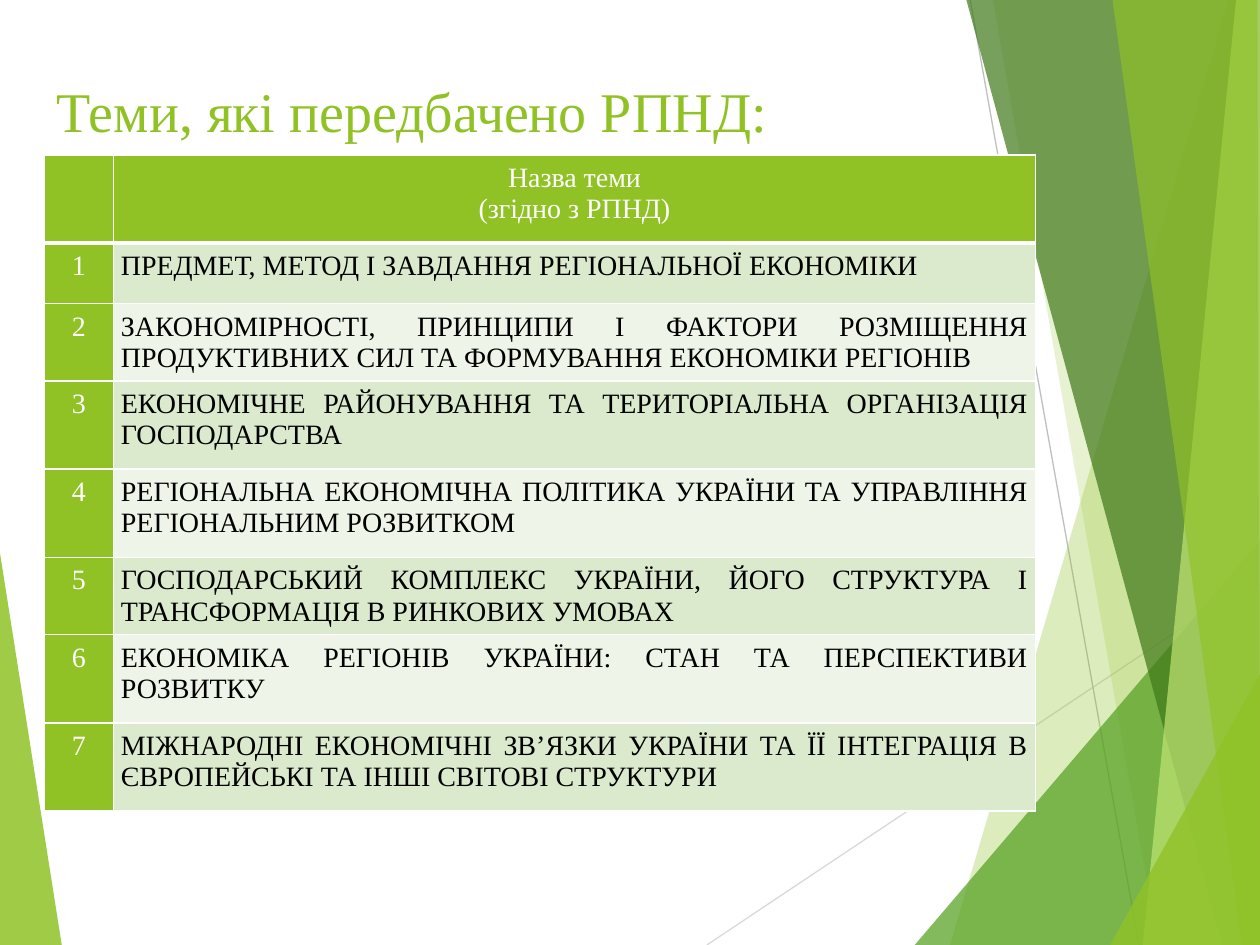
from lxml import etree
from pptx import Presentation
from pptx.dml.color import RGBColor
from pptx.enum import shapes, text
from pptx.oxml import parse_xml
from pptx.oxml.ns import qn
from pptx.util import Inches, Pt

FONT = "Times New Roman"
NS = 'xmlns:a="http://schemas.openxmlformats.org/drawingml/2006/main"'
WHITE = RGBColor(0xFF, 0xFF, 0xFF)
BLACK = RGBColor(0, 0, 0)
LIME = RGBColor(0x90, 0xC2, 0x26)
PALE = RGBColor(0xC0, 0xE4, 0x74)
GREEN = RGBColor(0x54, 0xA0, 0x21)
DARK = RGBColor(0x3F, 0x78, 0x19)
GREY = RGBColor(0xBF, 0xBF, 0xBF)
SILVER = RGBColor(0xD9, 0xD9, 0xD9)
BANDS = [RGBColor(0xDB, 0xE9, 0xCD), RGBColor(0xEE, 0xF4, 0xE8)]

prs = Presentation()
prs.slide_width, prs.slide_height = Inches(10), Inches(7.5)
slide = prs.slides.add_slide(prs.slide_layouts[5])


def write(para, words, size, color):
    run = para.add_run()
    run.text = words
    run.font.name = FONT
    run.font.size = Pt(size)
    run.font.color.rgb = color
    return run


def fill_cell(cell, lines, color, align, back, edges):
    """Fill a cell with text and give it white borders, edges being (side, points) pairs."""
    cell.margin_left = cell.margin_right = Inches(0.06)
    cell.margin_top = cell.margin_bottom = Inches(0.06)
    cell.fill.solid()
    cell.fill.fore_color.rgb = back
    for i, line in enumerate(lines):
        para = cell.text_frame.paragraphs[0] if i == 0 else cell.text_frame.add_paragraph()
        para.alignment = align
        write(para, line, 16, color)
    props = cell._tc.get_or_add_tcPr()
    for i, (side, width) in enumerate(edges):
        props.insert(i, parse_xml(
            f'<a:ln{side} {NS} w="{Pt(width)}"><a:solidFill><a:srgbClr val="{WHITE}"/>'
            f'</a:solidFill></a:ln{side}>'))


# Backdrop: thin lines and translucent facets, back to front
lines = [(5.61, 7.5, 10, 4.57, SILVER), (7.7, 0, 9.04, 7.5, GREY)]
for x1, y1, x2, y2, color in lines:
    line = slide.shapes.add_connector(
        shapes.MSO_CONNECTOR.STRAIGHT, Inches(x1), Inches(y1), Inches(x2), Inches(y2))
    line.line.color.rgb = color
    line.line.width = Pt(0.75)
    etree.SubElement(line._element.spPr, qn("a:effectLst"))

facets = [
    (LIME, 85, [(0, 4.39), (0.49, 7.5), (0, 7.5)]),
    (LIME, 30, [(9.75, 0), (7.54, 7.5), (10, 7.5), (10, 0)]),
    (LIME, 20, [(7.88, 0), (9.19, 7.5), (10, 7.5), (10, 0)]),
    (GREEN, 72, [(7.26, 7.5), (10, 4.29), (10, 7.5)]),
    (DARK, 70, [(7.67, 0), (9.7, 7.5), (10, 7.5), (10, 0)]),
    (PALE, 70, [(9.81, 0), (9.07, 7.5), (10, 7.5), (10, 0)]),
    (LIME, 65, [(8.83, 0), (9.86, 7.5), (10, 7.5), (9.98, 0)]),
    (LIME, 80, [(8.81, 7.5), (10, 5.35), (10, 7.5)]),
]
for color, alpha, points in facets:
    path = [(Inches(x), Inches(y)) for x, y in points]
    pen = slide.shapes.build_freeform(*path[0])
    pen.add_line_segments(path[1:], close=True)
    facet = pen.convert_to_shape()
    facet.shadow.inherit = False
    facet.line.fill.background()
    facet.fill.solid()
    facet.fill.fore_color.rgb = color
    tint = facet._element.spPr.find(".//" + qn("a:srgbClr"))
    etree.SubElement(tint, qn("a:alpha"), val=str(alpha * 1000))

# Title with a soft shadow, in front of the backdrop
title = slide.shapes.title
title._element.getparent().append(title._element)
title.left, title.top = Inches(0.35), Inches(0.52)
title.width, title.height = Inches(8.28), Inches(0.71)
title.text_frame.vertical_anchor = text.MSO_ANCHOR.MIDDLE
para = title.text_frame.paragraphs[0]
para.alignment = text.PP_ALIGN.LEFT
run = write(para, "Теми, які передбачено РПНД:", 32, LIME)
run.font._element.find(qn("a:solidFill")).addnext(parse_xml(
    f'<a:effectLst {NS}><a:outerShdw blurRad="{Pt(3)}" dist="{Pt(3)}" dir="2700000">'
    '<a:srgbClr val="000000"><a:alpha val="43000"/></a:srgbClr></a:outerShdw></a:effectLst>'))

# Table of topics
topics = [
    "ПРЕДМЕТ, МЕТОД І ЗАВДАННЯ РЕГІОНАЛЬНОЇ ЕКОНОМІКИ",
    "ЗАКОНОМІРНОСТІ, ПРИНЦИПИ І ФАКТОРИ РОЗМІЩЕННЯ ПРОДУКТИВНИХ СИЛ "
    "ТА ФОРМУВАННЯ ЕКОНОМІКИ РЕГІОНІВ",
    "ЕКОНОМІЧНЕ РАЙОНУВАННЯ ТА ТЕРИТОРІАЛЬНА ОРГАНІЗАЦІЯ ГОСПОДАРСТВА",
    "РЕГІОНАЛЬНА ЕКОНОМІЧНА ПОЛІТИКА УКРАЇНИ ТА УПРАВЛІННЯ РЕГІОНАЛЬНИМ РОЗВИТКОМ",
    "ГОСПОДАРСЬКИЙ КОМПЛЕКС УКРАЇНИ, ЙОГО СТРУКТУРА І ТРАНСФОРМАЦІЯ В РИНКОВИХ УМОВАХ",
    "ЕКОНОМІКА РЕГІОНІВ УКРАЇНИ: СТАН ТА ПЕРСПЕКТИВИ РОЗВИТКУ",
    "МІЖНАРОДНІ ЕКОНОМІЧНІ ЗВ’ЯЗКИ УКРАЇНИ ТА ЇЇ ІНТЕГРАЦІЯ "
    "В ЄВРОПЕЙСЬКІ ТА ІНШІ СВІТОВІ СТРУКТУРИ",
]
heights = [0.7, 0.48, 0.47, 0.7, 0.7, 0.42, 0.7, 0.7]
table = slide.shapes.add_table(
    len(heights), 2, Inches(0.35), Inches(1.23), Inches(7.87), Inches(sum(heights))).table
for col, width in zip(table.columns, [0.55, 7.32]):
    col.width = Inches(width)
for row, height in zip(table.rows, heights):
    row.height = Inches(height)

center, justify = text.PP_ALIGN.CENTER, text.PP_ALIGN.JUSTIFY
head = [("L", 1), ("R", 1), ("T", 1), ("B", 3)]
body = [("L", 1), ("R", 1), ("B", 1)]
fill_cell(table.cell(0, 0), [], WHITE, center, LIME, head)
fill_cell(table.cell(0, 1), ["Назва теми", "(згідно з РПНД)"], WHITE, center, LIME, head)
for n, topic in enumerate(topics, 1):
    fill_cell(table.cell(n, 0), [str(n)], WHITE, center, LIME, body)
    fill_cell(table.cell(n, 1), [topic], BLACK, justify, BANDS[(n - 1) % 2], body)

prs.save("out.pptx")
